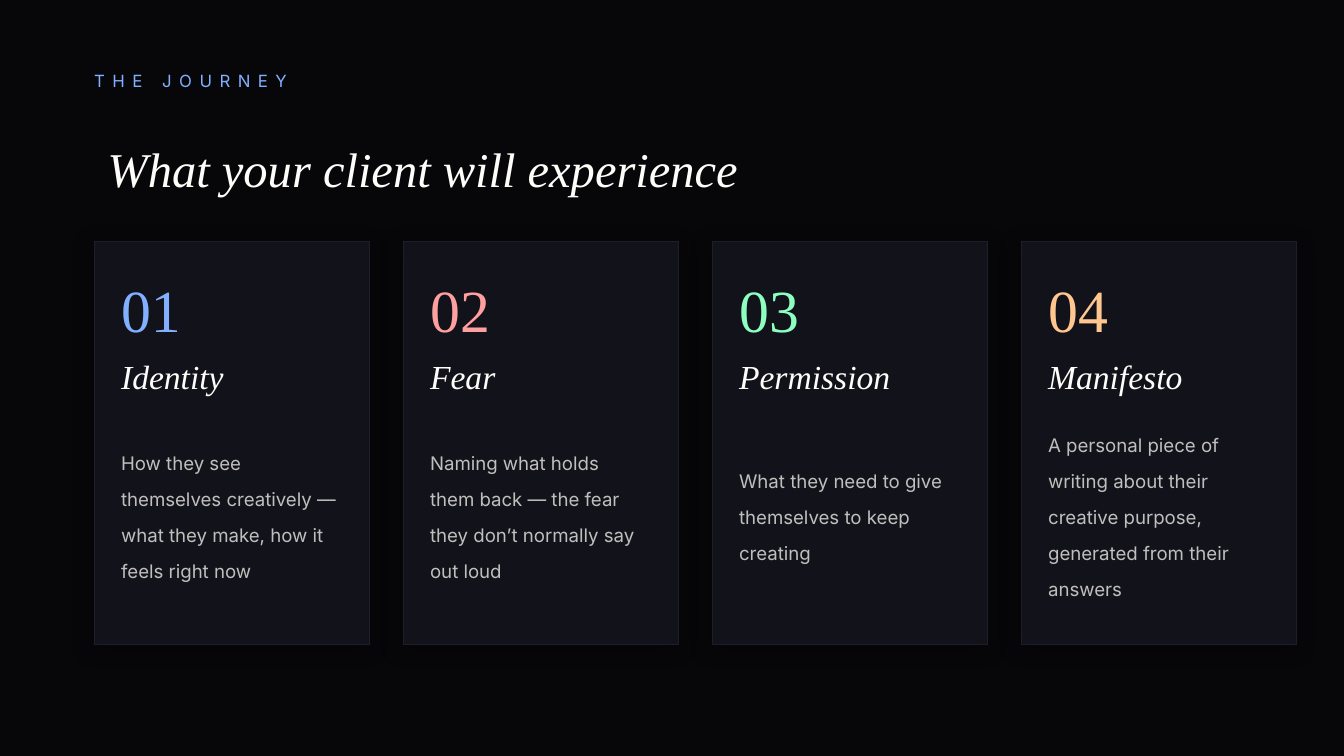
from lxml.etree import SubElement
from pptx import Presentation
from pptx.dml.color import RGBColor
from pptx.enum.shapes import MSO_SHAPE
from pptx.enum.text import MSO_ANCHOR
from pptx.oxml.ns import qn
from pptx.util import Cm, Pt

SERIF, SANS = "Times New Roman", "Inter"
CREAM, BLUE = "FFFDF9", "82AFFF"
STEPS = [
    ("Identity", BLUE,
     "How they see themselves creatively — what they make, how it feels right now"),
    ("Fear", "FFA0A0",
     "Naming what holds them back — the fear they don’t normally say out loud"),
    ("Permission", "8DFFC0",
     "What they need to give themselves to keep creating"),
    ("Manifesto", "FFC78F",
     "A personal piece of writing about their creative purpose, generated from their answers"),
]


def color(hex_value):
    """Turn a hex string into a colour."""
    return RGBColor.from_string(hex_value)


def add_text(slide, text, box, *, size, font, fill, italic=False,
             line_spacing=None, tracking=None, inset=(0, 0)):
    """Place one formatted paragraph, centred vertically in a box given in cm."""
    frame = slide.shapes.add_textbox(*map(Cm, box)).text_frame
    frame.word_wrap = True
    frame.vertical_anchor = MSO_ANCHOR.MIDDLE
    frame.margin_left = frame.margin_right = Cm(inset[0])
    frame.margin_top = frame.margin_bottom = Cm(inset[1])
    paragraph = frame.paragraphs[0]
    if line_spacing:
        paragraph.line_spacing = line_spacing
    run = paragraph.add_run()
    run.text = text
    run.font.size = Pt(size)
    run.font.name = font
    run.font.italic = italic
    run.font.color.rgb = color(fill)
    if tracking:
        run.font._element.set("spc", str(tracking * 100))


def add_soft_shadow(card):
    """Give a card a blurred black shadow."""
    card.shadow.inherit = False
    effects = card._element.spPr.find(qn("a:effectLst"))
    shadow = SubElement(effects, qn("a:outerShdw"), blurRad=str(Pt(12)),
                        dist=str(Pt(2)), dir=str(135 * 60000),
                        algn="bl", rotWithShape="0")
    black = SubElement(shadow, qn("a:srgbClr"), val="000000")
    SubElement(black, qn("a:alpha"), val="30000")


def add_header(slide, left, top, width):
    """Place the section label and the heading below it."""
    add_text(slide, "THE JOURNEY", (left, top, 10.16, 1.02),
             size=9, font=SANS, fill=BLUE, tracking=4)
    add_text(slide, "What your client will experience", (left, top + 1.27, width, 1.78),
             size=26, font=SERIF, fill=CREAM, italic=True, inset=(0.25, 0.13))


def add_step_card(slide, box, number, title, accent, description):
    """Draw one journey step with its number, title and description."""
    left, top, width, height = box
    card = slide.shapes.add_shape(MSO_SHAPE.RECTANGLE, *map(Cm, box))
    card.fill.solid()
    card.fill.fore_color.rgb = color("12121A")
    card.line.color.rgb = color("1E1E28")
    card.line.width = Pt(0.5)
    add_soft_shadow(card)

    padding = 0.51
    text_left, text_top, text_width = left + padding, top + padding, width - 1.14
    add_text(slide, f"{number:02}", (text_left, text_top, text_width, 1.52),
             size=32, font=SERIF, fill=accent)
    add_text(slide, title, (text_left, text_top + 1.52, text_width, 1.02),
             size=18, font=SERIF, fill=CREAM, italic=True)
    add_text(slide, description, (text_left, text_top + 2.79, text_width, height - 4.06),
             size=10, font=SANS, fill="C1BFBD", line_spacing=1.6)


def add_journey(slide, box):
    """Spread the step cards evenly across a box."""
    left, top, width, height = box
    gap = 0.63
    card_width = (width - gap * (len(STEPS) - 1)) / len(STEPS)
    for index, (title, accent, description) in enumerate(STEPS):
        card_left = left + index * (card_width + gap)
        add_step_card(slide, (card_left, top, card_width, height),
                      index + 1, title, accent, description)


def main():
    """Build the slide and save it."""
    deck = Presentation()
    deck.slide_width, deck.slide_height = Cm(25.4), Cm(14.29)
    slide = deck.slides.add_slide(deck.slide_layouts[6])
    slide.background.fill.solid()
    slide.background.fill.fore_color.rgb = color("07070A")
    add_header(slide, 1.78, 1.02, 20.32)
    add_journey(slide, (1.78, 4.57, 22.73, 7.62))
    deck.save("out.pptx")


if __name__ == "__main__":
    main()
